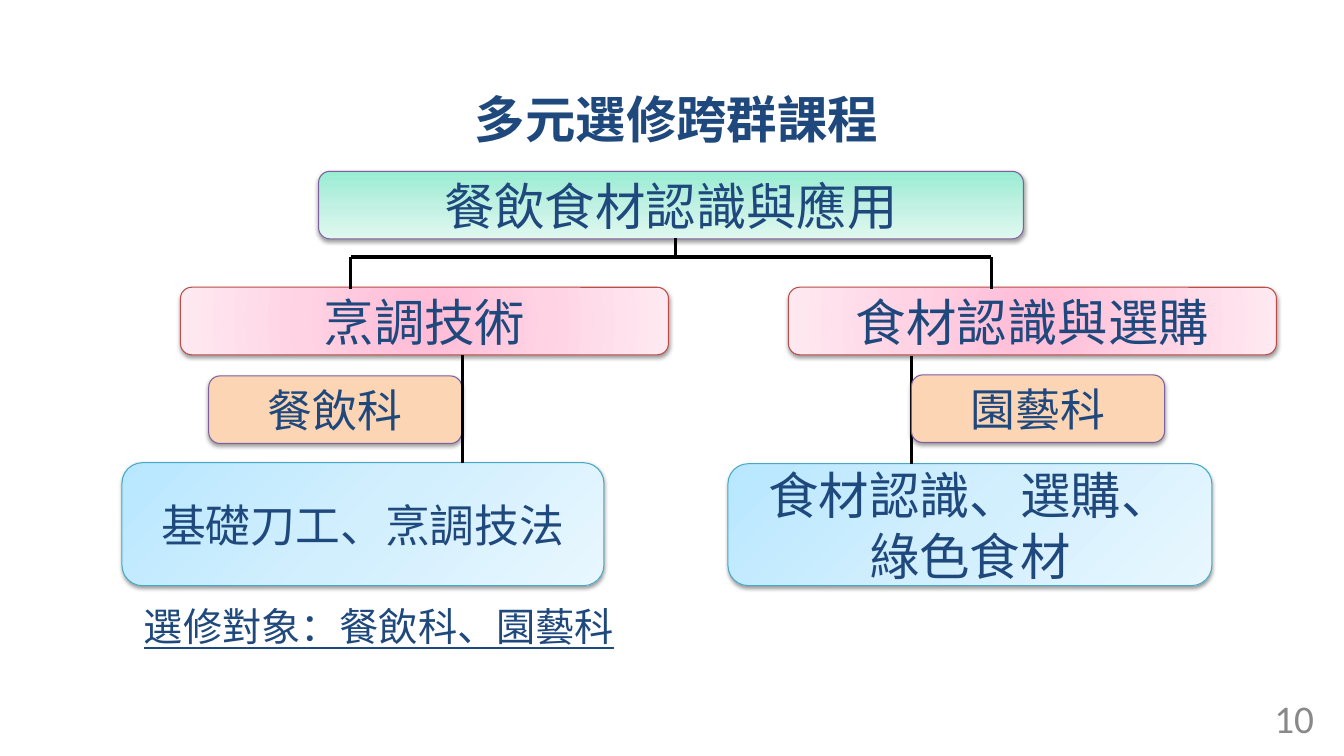
"""Build the slide showing the cross-group elective course chart."""
from lxml import etree
from pptx import Presentation
from pptx.dml.color import RGBColor
from pptx.enum.shapes import MSO_CONNECTOR, MSO_SHAPE
from pptx.enum.text import MSO_ANCHOR, MSO_AUTO_SIZE, PP_ALIGN
from pptx.oxml.ns import qn
from pptx.util import Inches, Pt

ROUNDED = MSO_SHAPE.ROUNDED_RECTANGLE
STRAIGHT = MSO_CONNECTOR.STRAIGHT
MIDDLE = MSO_ANCHOR.MIDDLE
LEFT, CENTER, RIGHT = PP_ALIGN.LEFT, PP_ALIGN.CENTER, PP_ALIGN.RIGHT

CJK_FONT = "Noto Sans CJK SC"
NAVY, GREY, BLACK = "1F497D", "898989", "000000"

TITLE = ("多元選修跨群課程", (2.86, 0.79, 7.7, 0.76))
AUDIENCE = ("選修對象：餐飲科、園藝科", (1.33, 5.93, 10.17, 0.57))
PAGE_NUMBER = ("10", (10.02, 6.92, 3.11, 0.4))

STYLES = {
    "course": {"colors": ("98ECD2", "C0F1E2", "E0F8F0"), "angle": 90, "line": "7D60A0"},
    "subject": {"colors": ("FFBAD6", "FFD3E4", "FFE9F1"), "angle": None, "line": "BF4C48"},
    "department": {"colors": ("FCD5B5",), "angle": None, "line": "7D60A0"},
    "content": {"colors": ("B8E7FF", "D2EFFE", "E8F7FE"), "angle": 45, "line": "46AAC5"},
}

BOXES = [
    ("course", "餐飲食材認識與應用", 36, (3.16, 1.7, 6.99, 0.67)),
    ("department", "餐飲科", 32, (2.07, 3.73, 2.51, 0.67)),
    ("subject", "烹調技術", 36, (1.79, 2.85, 4.84, 0.67)),
    ("subject", "食材認識與選購", 36, (7.82, 2.85, 4.84, 0.67)),
    ("content", "基礎刀工、烹調技法", 32, (1.21, 4.59, 4.78, 1.22)),
    ("content", "食材認識、選購、綠色食材", 36, (7.22, 4.6, 4.8, 1.21)),
]
FRONT_BOX = ("department", "園藝科", 32, (9.04, 3.72, 2.51, 0.67))

BRANCH_LEFT, BRANCH_RIGHT, BRANCH_TOP, BRANCH_BOTTOM = 3.48, 9.83, 2.55, 2.87
LINES = [
    (BRANCH_LEFT, BRANCH_TOP, BRANCH_LEFT, BRANCH_BOTTOM),
    (BRANCH_RIGHT, BRANCH_TOP, BRANCH_RIGHT, BRANCH_BOTTOM),
    (BRANCH_LEFT, BRANCH_TOP, BRANCH_RIGHT, BRANCH_TOP),
    (4.59, 3.52, 4.59, 4.59),
    (9.04, 3.53, 9.04, 4.6),
]
STEM = (6.7, 2.36, 6.7, 2.56)


def rgb(value):
    """Return the colour for a hex string."""
    return RGBColor.from_string(value)


def add_element(parent, tag, **attributes):
    """Append a DrawingML element with the given attributes."""
    element = etree.SubElement(parent, qn(f"a:{tag}"))
    for name, value in attributes.items():
        element.set(name, str(value))
    return element


def write_text(shape, text, size, align, font_name=CJK_FONT, color=NAVY):
    """Write one run into the shape and return its font."""
    frame = shape.text_frame
    frame.word_wrap = True
    paragraph = frame.paragraphs[0]
    paragraph.alignment = align
    run = paragraph.add_run()
    run.text = text
    font = run.font
    font.size = Pt(size)
    font.color.rgb = rgb(color)
    font.name = font_name
    add_element(run._r.get_or_add_rPr(), "ea", typeface=font_name)
    return font


def add_text(slide, item, size, align, **options):
    """Add a text box and return its frame and font."""
    text, bounds = item
    shape = slide.shapes.add_textbox(*map(Inches, bounds))
    font = write_text(shape, text, size, align, **options)
    return shape.text_frame, font


def fill_gradient(properties, colors, angle):
    """Fill with a linear gradient, or a circular one when angle is None."""
    gradient = add_element(properties, "gradFill", rotWithShape=1)
    stops = add_element(gradient, "gsLst")
    for index, color in enumerate(colors):
        position = index * 100000 // (len(colors) - 1)
        add_element(add_element(stops, "gs", pos=position), "srgbClr", val=color)
    if angle is None:
        circle = add_element(gradient, "path", path="circle")
        add_element(circle, "fillToRect", l=50000, t=50000, r=50000, b=50000)
    else:
        add_element(gradient, "lin", ang=angle * 60000, scaled=0)


def add_shadow(properties):
    """Add the soft shadow that falls below a box."""
    shadow = add_element(add_element(properties, "effectLst"), "outerShdw",
                         blurRad=Pt(3.1), dist=Pt(1.6), dir=90 * 60000, rotWithShape=0)
    color = add_element(shadow, "srgbClr", val=BLACK)
    add_element(color, "alpha", val=38000)


def add_box(slide, kind, text, size, bounds):
    """Add a rounded box in the style of its level."""
    style = STYLES[kind]
    shape = slide.shapes.add_shape(ROUNDED, *map(Inches, bounds))
    properties = shape._element.spPr
    colors = style["colors"]
    if len(colors) == 1:
        shape.fill.solid()
        shape.fill.fore_color.rgb = rgb(colors[0])
    else:
        fill_gradient(properties, colors, style["angle"])
    shape.line.color.rgb = rgb(style["line"])
    shape.line.width = Pt(0.75)
    add_shadow(properties)
    shape.text_frame.vertical_anchor = MIDDLE
    write_text(shape, text, size, CENTER)


def add_line(slide, ends):
    """Add a black line without a shadow."""
    connector = slide.shapes.add_connector(STRAIGHT, *map(Inches, ends))
    connector.line.color.rgb = rgb(BLACK)
    connector.line.width = Pt(2.25)
    add_element(connector._element.spPr, "effectLst")


def main():
    """Build and save the slide."""
    presentation = Presentation()
    presentation.slide_width = Inches(13.33)
    presentation.slide_height = Inches(7.5)
    slide = presentation.slides.add_slide(presentation.slide_layouts[6])

    title_frame, title_font = add_text(slide, TITLE, 36, CENTER)
    title_font.bold = True
    title_frame.vertical_anchor = MIDDLE
    title_frame.margin_left = title_frame.margin_right = 0

    audience_frame, audience_font = add_text(slide, AUDIENCE, 28, LEFT)
    audience_font.underline = True
    audience_frame.auto_size = MSO_AUTO_SIZE.SHAPE_TO_FIT_TEXT

    for box in BOXES:
        add_box(slide, *box)
    for ends in LINES:
        add_line(slide, ends)
    add_box(slide, *FRONT_BOX)
    add_line(slide, STEM)

    number_frame, _ = add_text(slide, PAGE_NUMBER, 28, RIGHT, font_name="Calibri", color=GREY)
    number_frame.vertical_anchor = MIDDLE

    presentation.save("out.pptx")


if __name__ == "__main__":
    main()
